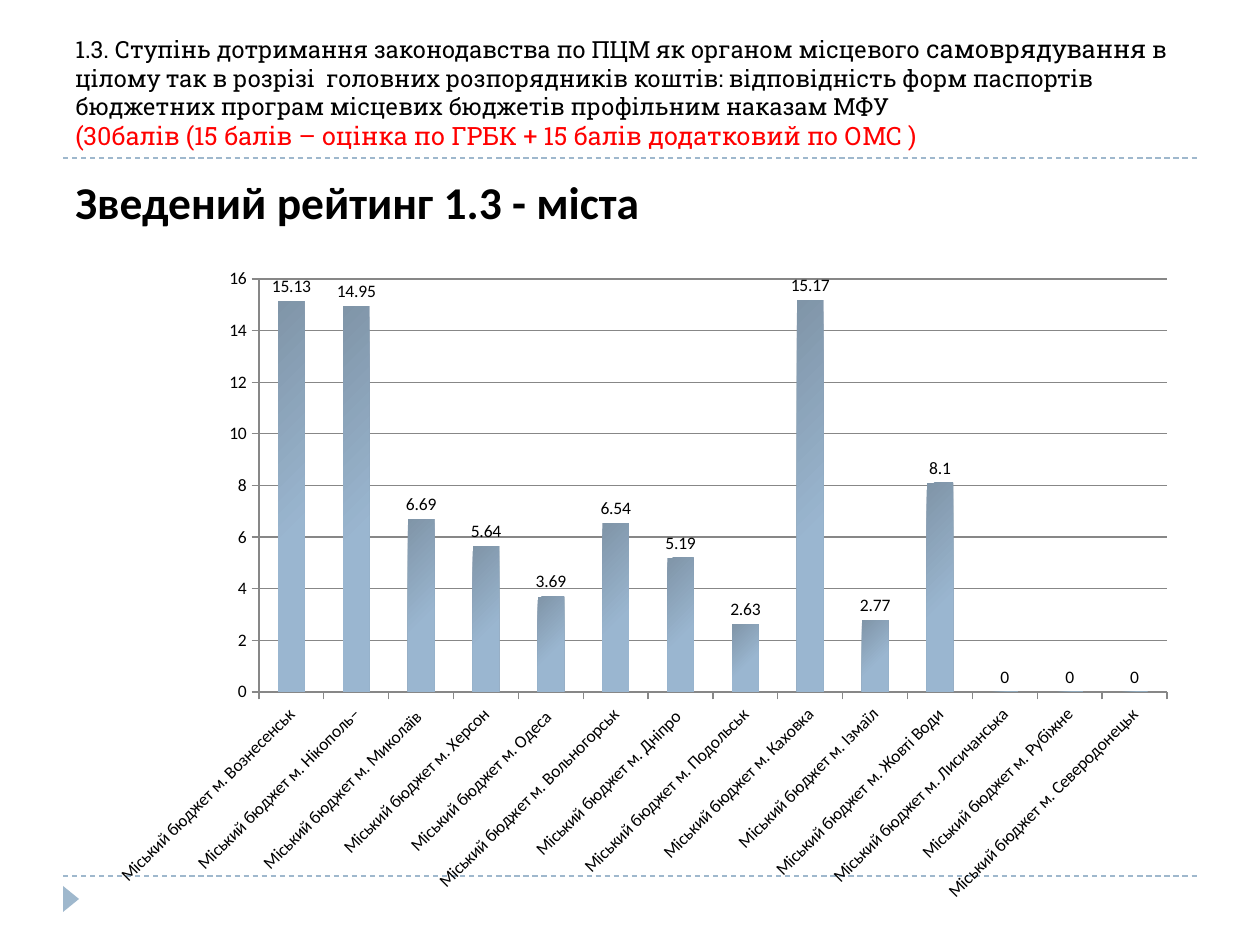
import pptx
import pptx.util
import pptx.dml.color
import pptx.chart.data
import pptx.enum.chart
import pptx.enum.dml
import pptx.enum.shapes
import pptx.enum.text
import pptx.oxml
import pptx.oxml.ns

SIZE = (1260, 945)
TITLE = [
    ("1.3. Ступінь дотримання законодавства по ПЦМ як органом місцевого ", 13.5, "000000"),
    ("самоврядування", 14.4, "000000"),
    (" в цілому так в розрізі  головних розпорядників коштів: відповідність форм "
     "паспортів бюджетних програм місцевих бюджетів профільним наказам МФУ ", 13.5, "000000"),
    None,
    ("(30балів (15 балів – оцінка по ГРБК + 15 балів додатковий по ОМС )", 14.4, "FF0000"),
]
HEADING = [("Зведений рейтинг 1.3 - міста", 26, "000000")]
CITIES = [
    ("Вознесенськ", 15.13), ("Нікополь–", 14.95), ("Миколаїв ", 6.69), ("Херсон", 5.64),
    ("Одеса ", 3.69), ("Вольногорськ", 6.54), ("Дніпро ", 5.19), ("Подольськ", 2.63),
    ("Каховка", 15.17), ("Ізмаїл", 2.77), ("Жовті Води", 8.1), ("Лисичанська", 0),
    ("Рубіжне", 0), ("Северодонецьк", 0),
]
RULES = [158, 876]
MARKER = (58, 891, 26, 16)
TITLE_BOX = (63, 21, 1134, 136)
HEADING_BOX = (63, 168, 1134, 680)
CHART_BOX = (98, 256, 1092, 659)
PLOT_BOX = (259, 279, 908, 413)
ACCENT, GRID = "9FB8CD", "878787"


def px(n):
    return pptx.util.Emu(round(n * 914400 / 126))


def box(b):
    return [px(n) for n in b]


def rgb(h):
    return pptx.dml.color.RGBColor.from_string(h)


def set_line(line, color):
    line.color.rgb = rgb(color)
    line.width = pptx.util.Pt(0.75)


def add_text(s, b, runs, font, bold, anchor):
    tf = s.shapes.add_textbox(*box(b)).text_frame
    tf.word_wrap = True
    tf.vertical_anchor = anchor
    p = tf.paragraphs[0]
    for run in runs:
        if run is None:
            p.add_line_break()
            continue
        r = p.add_run()
        r.text, size, color = run
        r.font.size = pptx.util.Pt(size)
        r.font.name = font
        r.font.bold = bold
        r.font.color.rgb = rgb(color)
    return p


def add_rule(s, y):
    c = s.shapes.add_connector(pptx.enum.shapes.MSO_CONNECTOR.STRAIGHT,
                               px(63), px(y), px(1197), px(y))
    set_line(c.line, ACCENT)
    c.line.dash_style = pptx.enum.dml.MSO_LINE.DASH
    c._element.spPr.append(pptx.oxml.parse_xml(
        f"<a:effectLst {pptx.oxml.ns.nsdecls('a')}/>"))


def add_marker(s):
    sp = s.shapes.add_shape(pptx.enum.shapes.MSO_SHAPE.ISOSCELES_TRIANGLE, *box(MARKER))
    sp.rotation = 90
    sp.shadow.inherit = False
    sp.fill.solid()
    sp.fill.fore_color.rgb = rgb(ACCENT)
    sp.line.fill.background()


def place_plot(chart):
    left, top, width, height = CHART_BOX
    x, y, w, h = PLOT_BOX
    parts = {"x": (x - left) / width, "y": (y - top) / height, "w": w / width, "h": h / height}
    modes = "".join(f'<c:{k}Mode val="edge"/>' for k in "xy")
    values = "".join(f'<c:{k} val="{v:.4f}"/>' for k, v in parts.items())
    area = chart._chartSpace.chart.plotArea
    for old in area.findall(pptx.oxml.ns.qn("c:layout")):
        area.remove(old)
    area.insert(0, pptx.oxml.parse_xml(
        f"<c:layout {pptx.oxml.ns.nsdecls('c')}><c:manualLayout>"
        f'<c:layoutTarget val="inner"/>{modes}{values}</c:manualLayout></c:layout>'))


def add_ratings(s):
    data = pptx.chart.data.CategoryChartData()
    data.categories = [f"Міський бюджет м. {city}" for city, _ in CITIES]
    data.add_series("Series 1", [value for _, value in CITIES])
    chart = s.shapes.add_chart(pptx.enum.chart.XL_CHART_TYPE.COLUMN_CLUSTERED,
                               *box(CHART_BOX), data).chart
    chart.has_legend = False
    chart.has_title = False
    chart.font.name = "Calibri"
    chart.font.size = pptx.util.Pt(10)
    chart.font.color.rgb = rgb("000000")
    place_plot(chart)

    plot = chart.plots[0]
    plot.vary_by_categories = False
    plot.gap_width = 145
    plot.has_data_labels = True
    plot.data_labels.show_value = True
    plot.data_labels.position = pptx.enum.chart.XL_LABEL_POSITION.OUTSIDE_END

    fill = plot.series[0].format.fill
    fill.gradient()
    fill.gradient_angle = 315
    for stop, (color, position) in zip(fill.gradient_stops, [("8095A8", 0), ("9AB6D0", 0.6)]):
        stop.color.rgb = rgb(color)
        stop.position = position

    cat, val = chart.category_axis, chart.value_axis
    for axis in (cat, val):
        axis.major_tick_mark = pptx.enum.chart.XL_TICK_MARK.OUTSIDE
        set_line(axis.format.line, GRID)
    cat.tick_labels.font.size = pptx.util.Pt(10)
    cat._element.txPr.bodyPr.set("rot", "-2700000")
    val.minimum_scale, val.maximum_scale, val.major_unit = 0, 16, 2
    val.has_major_gridlines = True
    set_line(val.major_gridlines.format.line, GRID)


def main():
    prs = pptx.Presentation()
    prs.slide_width, prs.slide_height = box(SIZE)
    s = prs.slides.add_slide(prs.slide_layouts[6])
    for y in RULES:
        add_rule(s, y)
    add_marker(s)
    anchors = pptx.enum.text.MSO_ANCHOR
    add_text(s, TITLE_BOX, TITLE, "Roboto Slab", False, anchors.BOTTOM)
    p = add_text(s, HEADING_BOX, HEADING, "Calibri", True, anchors.TOP)
    p.space_before = pptx.util.Pt(6)
    add_ratings(s)
    prs.save("out.pptx")


if __name__ == "__main__":
    main()
